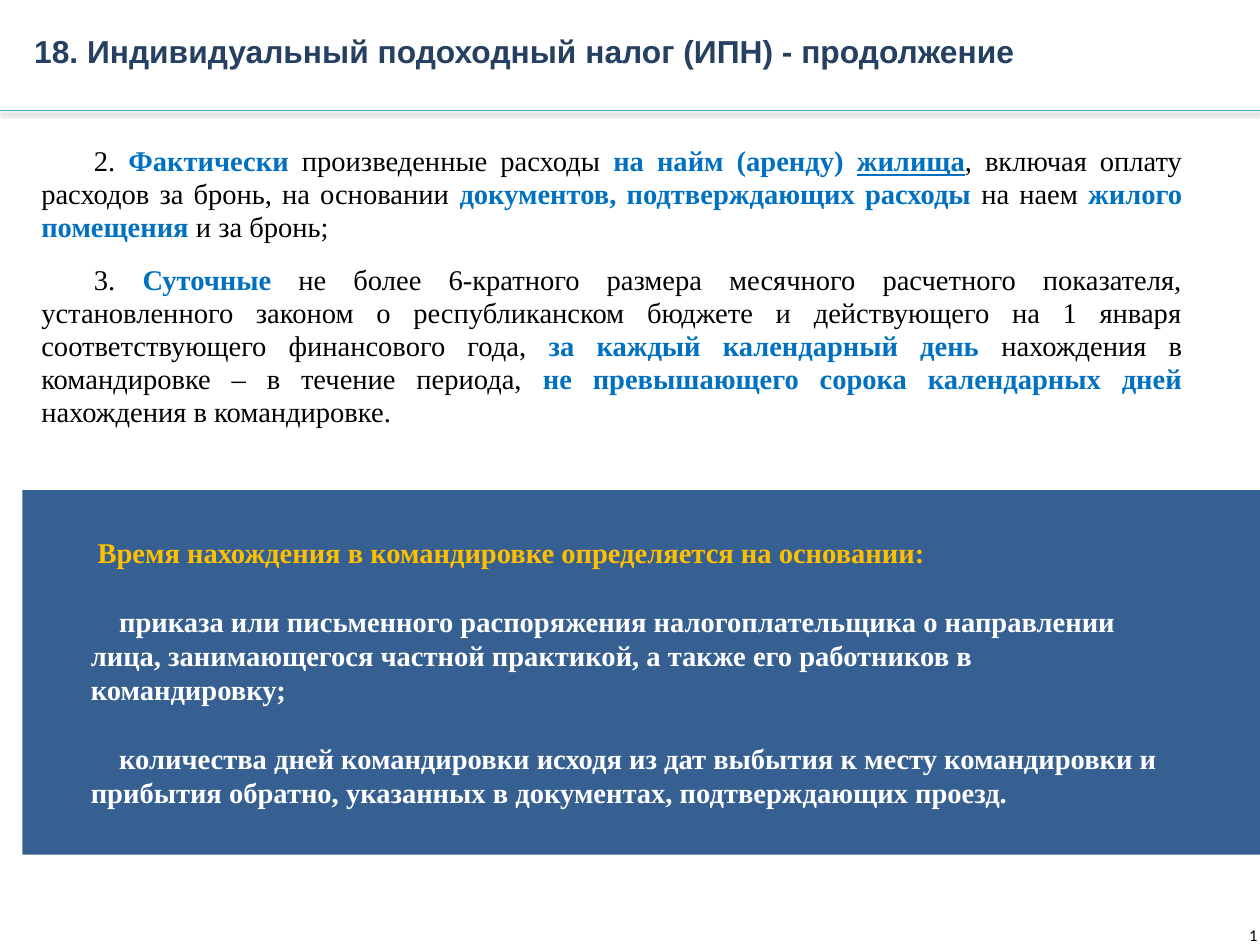
"""Build the slide on individual income tax and travel expenses."""
from lxml.etree import SubElement
from pptx import Presentation
from pptx.dml.color import RGBColor
from pptx.enum.shapes import MSO_CONNECTOR, MSO_SHAPE
from pptx.enum.text import MSO_ANCHOR, PP_ALIGN
from pptx.oxml import parse_xml
from pptx.oxml.ns import nsdecls, qn
from pptx.util import Cm, Pt

NAVY = RGBColor(0x25, 0x40, 0x61)
PANEL_BLUE = RGBColor(0x37, 0x60, 0x92)
ACCENT_BLUE = RGBColor(0x00, 0x70, 0xC0)
TEAL = RGBColor(0x4B, 0xAC, 0xC6)
GOLD = RGBColor(0xFF, 0xC0, 0x00)
WHITE = RGBColor(0xFF, 0xFF, 0xFF)
BLACK = RGBColor(0x00, 0x00, 0x00)
SERIF = "Times New Roman"


def set_font(font, name, size, color, bold=False):
    font.name = name
    font.size = Pt(size)
    font.color.rgb = color
    font.bold = bold


def set_indent(paragraph, left, first_line):
    properties = paragraph._p.get_or_add_pPr()
    properties.set("marL", str(Cm(left)))
    properties.set("indent", str(Cm(first_line)))


presentation = Presentation()
presentation.slide_width = Cm(28.02)
presentation.slide_height = Cm(21.01)
slide = presentation.slides.add_slide(presentation.slide_layouts[6])

panel = slide.shapes.add_shape(MSO_SHAPE.RECTANGLE, Cm(0.5), Cm(10.9), Cm(27.52), Cm(8.1))
panel.shadow.inherit = False
panel.fill.solid()
panel.fill.fore_color.rgb = PANEL_BLUE
panel.line.fill.background()
panel_frame = panel.text_frame
panel_frame.word_wrap = True
panel_frame.vertical_anchor = MSO_ANCHOR.MIDDLE
panel_frame.margin_left = Cm(1.52)
panel_frame.margin_right = Cm(2.1)
panel_lines = [
    ("Время нахождения в командировке определяется на основании:", GOLD, 0.15, 0),
    ("приказа или письменного распоряжения налогоплательщика о направлении лица, "
     "занимающегося частной практикой, а также его работников в командировку;", WHITE, 0.63, 21.6),
    ("количества дней командировки исходя из дат выбытия к месту командировки и "
     "прибытия обратно, указанных в документах, подтверждающих проезд.", WHITE, 0.63, 21.6),
]
for index, (text, color, first_line, space) in enumerate(panel_lines):
    paragraph = panel_frame.paragraphs[0] if index == 0 else panel_frame.add_paragraph()
    paragraph.text = text
    paragraph.alignment = PP_ALIGN.LEFT
    paragraph.space_before = Pt(space)
    set_indent(paragraph, 0, first_line)
    set_font(paragraph.font, SERIF, 18, color, True)

number_box = slide.shapes.add_textbox(Cm(27.48), Cm(20.62), Cm(0.54), Cm(0.38))
number_frame = number_box.text_frame
number_frame.margin_left = number_frame.margin_right = 0
number_frame.margin_top = number_frame.margin_bottom = 0
number_frame.word_wrap = True
paragraph = number_frame.paragraphs[0]
paragraph.line_spacing = Pt(10.8)
set_indent(paragraph, 0.3, 0)
set_font(paragraph.font, "Calibri", 10.4, BLACK)
field = SubElement(paragraph._p, qn("a:fld"), type="slidenum",
                   id="{B6F15528-21DE-4FAA-801E-634DDDAF4B2B}")
SubElement(field, qn("a:rPr"), lang="ru-RU", sz="1040")
SubElement(field, qn("a:t")).text = "1"

expenses_box = slide.shapes.add_textbox(Cm(0.89), Cm(3.23), Cm(25.4), Cm(7.85))
expenses_frame = expenses_box.text_frame
expenses_frame.word_wrap = True
expenses_frame.margin_left = expenses_frame.margin_right = 0
expenses_frame.margin_top = expenses_frame.margin_bottom = 0
expenses = [
    [("2. ", ""), ("Фактически", "b"), (" произведенные расходы ", ""),
     ("на найм (аренду) ", "b"), ("жилища", "bu"),
     (", включая оплату расходов за бронь, на основании ", ""),
     ("документов, подтверждающих расходы ", "b"), ("на наем ", ""),
     ("жилого помещения ", "b"), ("и за бронь;", "")],
    [("3. ", ""), ("Суточные", "b"),
     (" не более 6-кратного размера месячного расчетного показателя, установленного законом "
      "о республиканском бюджете и действующего на 1 января соответствующего финансового года, ", ""),
     ("за каждый календарный день ", "b"),
     ("нахождения в командировке – в течение периода, ", ""),
     ("не превышающего сорока календарных дней ", "b"), ("нахождения в командировке.", "")],
]
for index, pieces in enumerate(expenses):
    paragraph = expenses_frame.paragraphs[0] if index == 0 else expenses_frame.add_paragraph()
    paragraph.alignment = PP_ALIGN.JUSTIFY
    paragraph.line_spacing = 0.96
    paragraph.space_before = Pt(12.7)
    set_indent(paragraph, 0.03, 1.17)
    set_font(paragraph.font, SERIF, 18, BLACK)
    for text, style in pieces:
        run = paragraph.add_run()
        run.text = text
        if "b" in style:
            run.font.bold = True
            run.font.color.rgb = ACCENT_BLUE
        if "u" in style:
            run.font.underline = True

title_rule = slide.shapes.add_connector(MSO_CONNECTOR.STRAIGHT, 0, Cm(2.46), Cm(28.02), Cm(2.46))
title_rule.line.color.rgb = TEAL
title_rule.line.width = Pt(0.5)
title_rule._element.spPr.append(parse_xml(
    f'<a:effectLst {nsdecls("a")}><a:outerShdw blurRad="{Pt(3.1)}" dist="{Pt(1.8)}" dir="5400000" '
    'rotWithShape="0"><a:srgbClr val="000000"><a:alpha val="35000"/></a:srgbClr>'
    '</a:outerShdw></a:effectLst>'))

title_box = slide.shapes.add_textbox(Cm(0.51), Cm(-0.36), Cm(23.85), Cm(2.06))
title_frame = title_box.text_frame
title_frame.word_wrap = True
title_frame.vertical_anchor = MSO_ANCHOR.BOTTOM
paragraph = title_frame.paragraphs[0]
paragraph.text = "18. Индивидуальный подоходный налог (ИПН) - продолжение"
paragraph.line_spacing = 0.9
set_font(paragraph.font, "Arial", 20, NAVY, True)

presentation.save("out.pptx")
